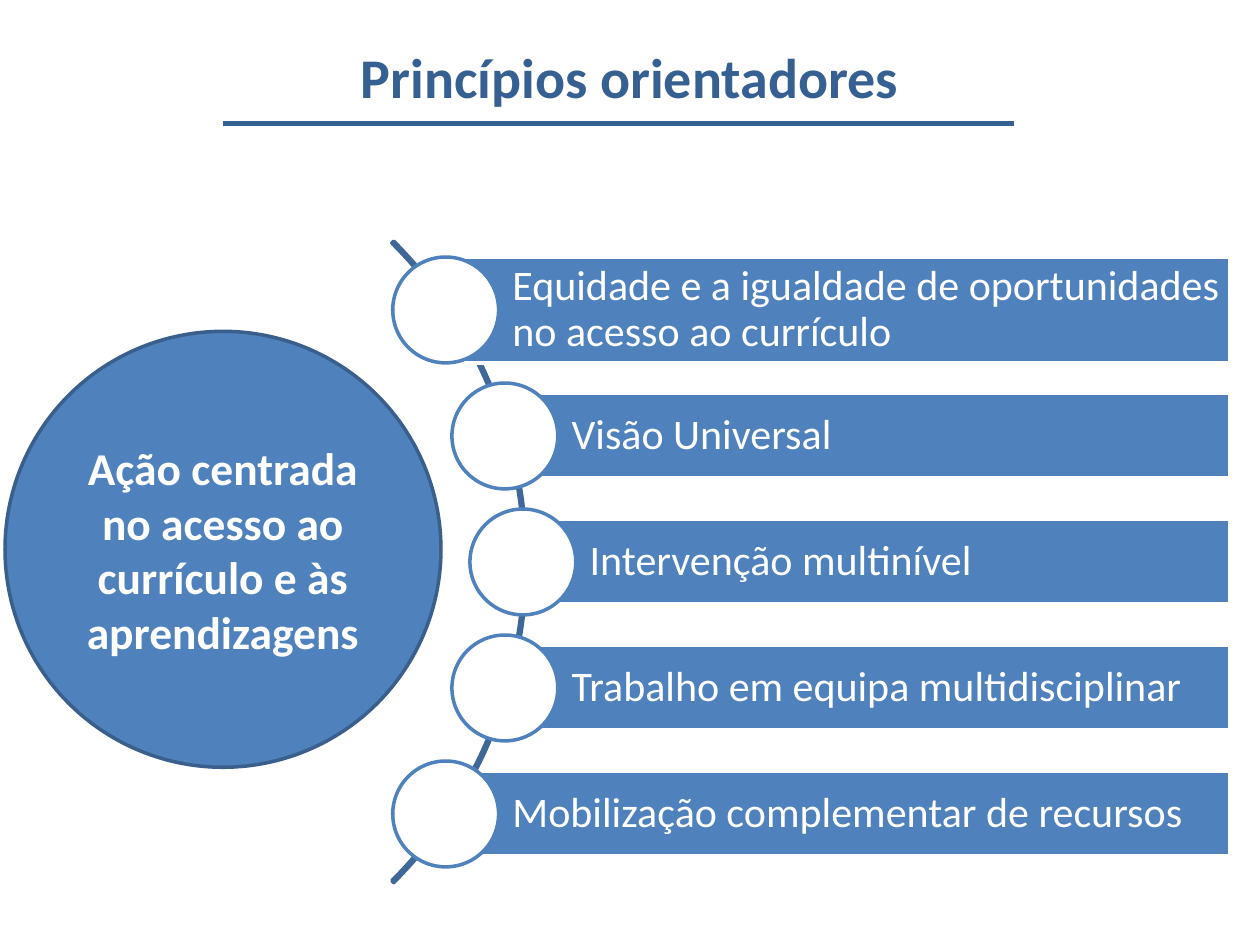
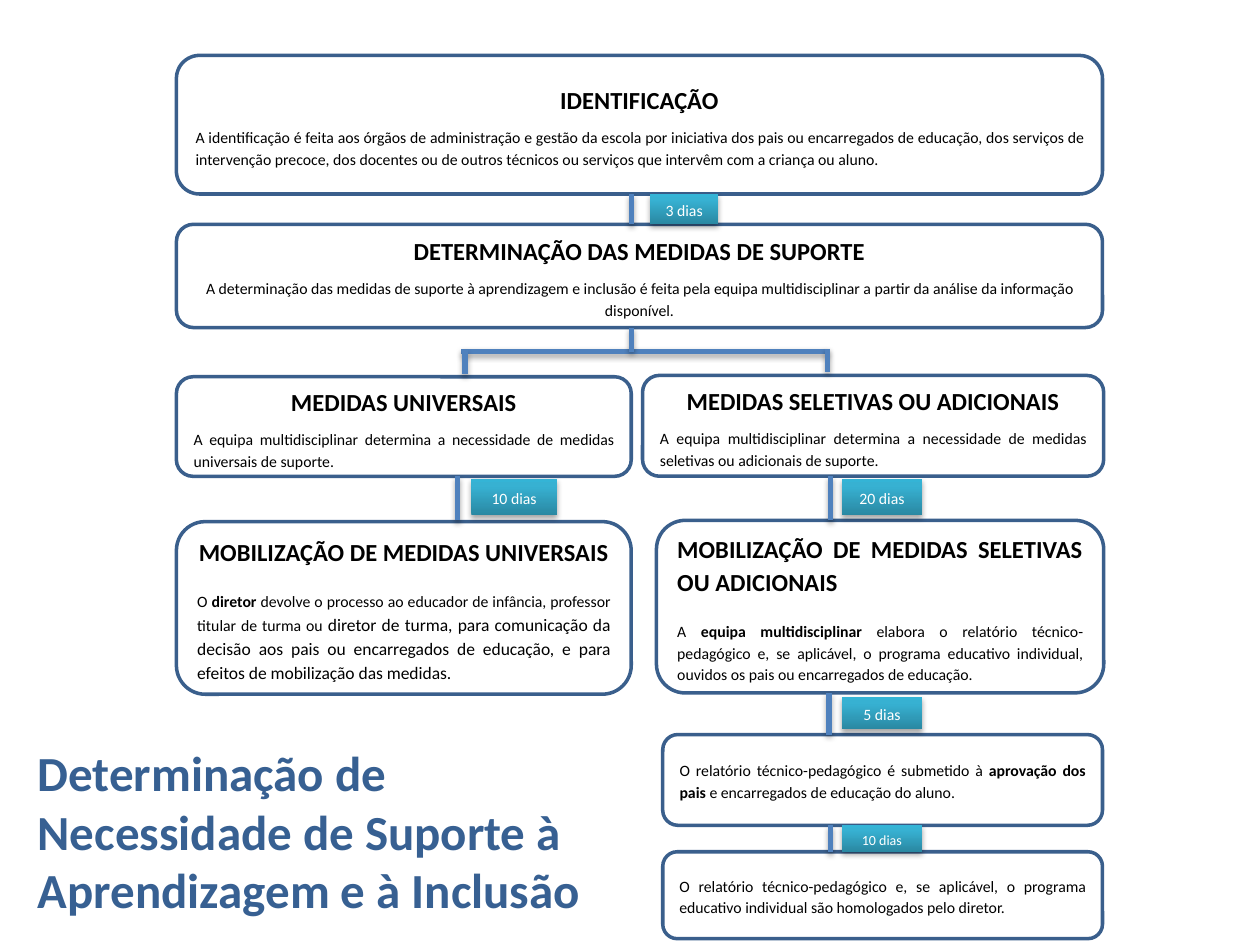
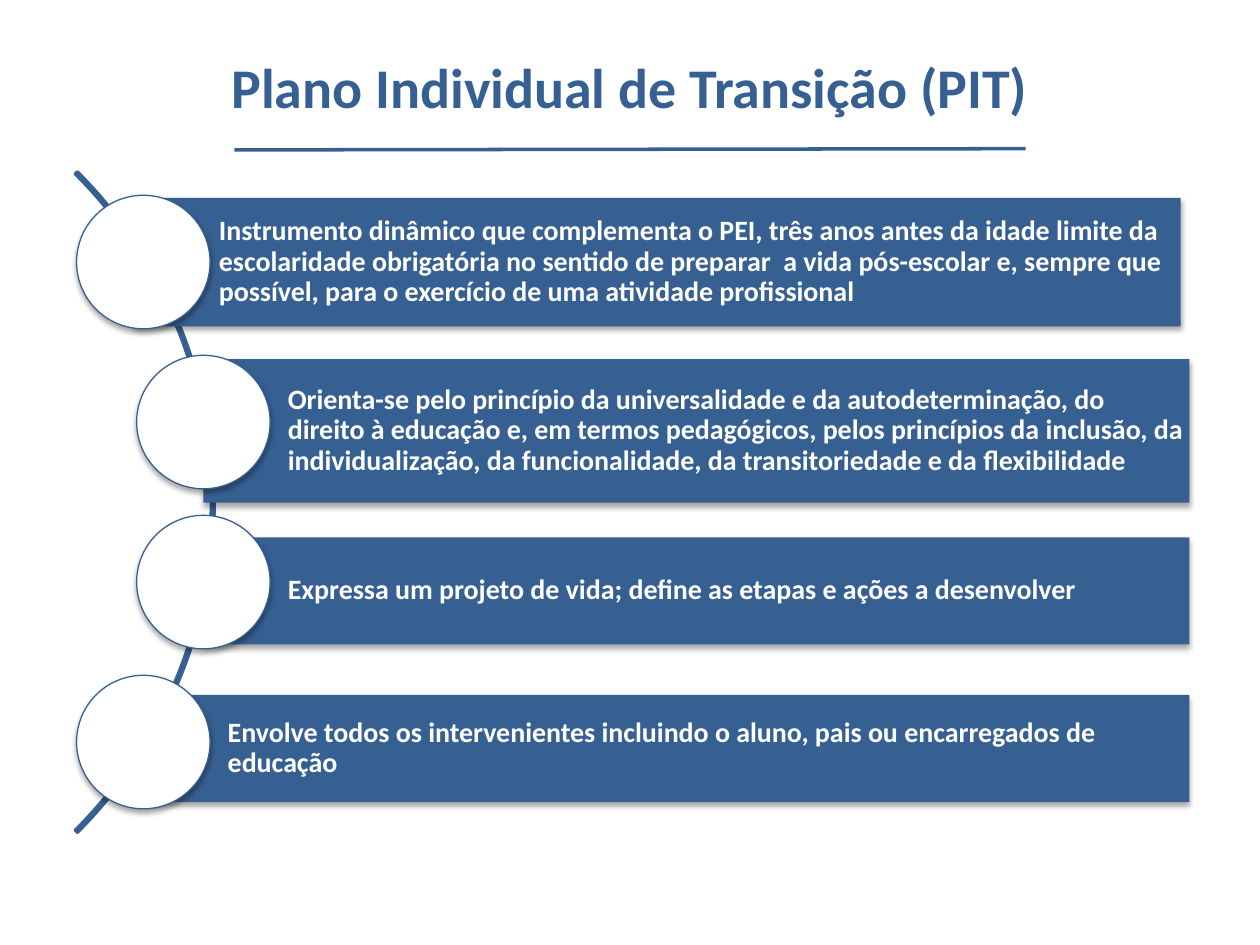
from copy import deepcopy
from dataclasses import dataclass
from math import sqrt

from lxml.etree import SubElement
from pptx import Presentation
from pptx.dml.color import RGBColor
from pptx.enum.shapes import MSO_CONNECTOR, MSO_SHAPE as SHAPE
from pptx.enum.text import MSO_ANCHOR as ANCHOR, MSO_AUTO_SIZE, PP_ALIGN as ALIGN
from pptx.oxml.ns import qn
from pptx.util import Inches, Pt


@dataclass(frozen=True)
class Theme:
    """Colours, font and type sizes shared by the slides."""

    font: str = "Calibri"
    navy: str = "376092"
    blue: str = "4F81BD"
    edge: str = "3A5F8C"
    arc: str = "3F6797"
    white: str = "FFFFFF"
    black: str = "000000"
    delay_stops: tuple = ((0, "2A88A2"), (0.8, "37B1D2"), (1, "34B4D6"))
    title: int = 32
    side_title: int = 28
    hub: int = 26
    heading: int = 14
    body: int = 9
    body_large: int = 10
    delay_small: int = 8


THEME = Theme()


@dataclass(frozen=True)
class Box:
    """A rectangle in inches."""

    left: float
    top: float
    width: float
    height: float

    def inner(self, left, top, width, height):
        """Return a box placed relative to this one."""
        return Box(self.left + left, self.top + top, width, height)

    def lengths(self):
        """Return the four measures as slide lengths."""
        return [Inches(n) for n in (self.left, self.top, self.width, self.height)]


@dataclass(frozen=True)
class Item:
    """One bar of an arc list, with its shift from its circle."""

    text: str
    height: float
    shift_x: float = 0
    shift_y: float = 0


@dataclass(frozen=True)
class ListStyle:
    """The look of one arc list."""

    arc: str
    bar: str
    bar_line: str | None
    circle_line: float
    size: int
    bold: bool
    indent: float
    inset: float
    shadow: bool


@dataclass(frozen=True)
class Words:
    """A paragraph of (text, bold, size) runs."""

    runs: tuple
    align: ALIGN = ALIGN.JUSTIFY
    after: float = 0
    spacing: float = 1.15


def rgb(colour):
    """Turn a hex string into a colour."""
    return RGBColor.from_string(colour)


def set_shadow(item, soft):
    """Give a shape or connector a soft shadow, or none."""
    effects = SubElement(item._element.spPr, qn("a:effectLst"))
    if soft:
        shadow = SubElement(effects, qn("a:outerShdw"), blurRad="40000",
                            dist="23000", dir="5400000", rotWithShape="0")
        colour = SubElement(shadow, qn("a:srgbClr"), val=THEME.black)
        SubElement(colour, qn("a:alpha"), val="35000")


def add_figure(page, kind, box, fill=None, line=None, width=2, soft=False):
    """Add a preset shape with its fill, line and shadow."""
    figure = page.shapes.add_shape(kind, *box.lengths())
    if fill:
        figure.fill.solid()
        figure.fill.fore_color.rgb = rgb(fill)
    else:
        figure.fill.background()
    if line:
        figure.line.color.rgb = rgb(line)
        figure.line.width = Pt(width)
    else:
        figure.line.fill.background()
    set_shadow(figure, soft)
    return figure


def add_line(page, start, end, colour, width, soft=False):
    """Add a straight line between two points."""
    line = page.shapes.add_connector(
        MSO_CONNECTOR.STRAIGHT, *[Inches(n) for n in (*start, *end)])
    line.line.color.rgb = rgb(colour)
    line.line.width = Pt(width)
    set_shadow(line, soft)


def write(shape, paragraphs, colour, anchor=ANCHOR.MIDDLE):
    """Write paragraphs into a shape, run by run."""
    frame = shape.text_frame
    frame.word_wrap = True
    frame.vertical_anchor = anchor
    for number, words in enumerate(paragraphs):
        para = frame.add_paragraph() if number else frame.paragraphs[0]
        para.alignment = words.align
        para.line_spacing = words.spacing
        para.space_after = Pt(words.after)
        for text, bold, size in words.runs:
            span = para.add_run()
            span.text = text
            span.font.name = THEME.font
            span.font.size = Pt(size)
            span.font.bold = bold
            span.font.color.rgb = rgb(colour)


def add_page(deck, title, box, size=THEME.title, align=ALIGN.CENTER, anchor=ANCHOR.MIDDLE):
    """Add a title-only slide and format its title."""
    page = deck.slides.add_slide(deck.slide_layouts[5])
    heading = page.shapes.title
    heading.left, heading.top, heading.width, heading.height = box.lengths()
    heading.text_frame.auto_size = MSO_AUTO_SIZE.NONE
    write(heading, [Words(((title, True, size),), align, spacing=1.0)], THEME.navy, anchor)
    return page


def arc_list(page, arc, right, diameter, pitch, items, style):
    """Place circles along an arc, each with a bar reaching to the right edge."""
    curve = add_figure(page, SHAPE.BLOCK_ARC, arc, line=style.arc)
    for index, value in enumerate((189, 27, 0.003)):
        curve.adjustments[index] = value
    radius = arc.width / 2
    for index, item in enumerate(items):
        offset = (index - (len(items) - 1) / 2) * pitch
        x = arc.left + radius + sqrt((radius - 0.03) ** 2 - offset ** 2)
        y = arc.top + radius + offset
        bar = add_figure(
            page, SHAPE.RECTANGLE,
            Box(x + item.shift_x, y - item.height / 2 + item.shift_y, right - x, item.height),
            style.bar, style.bar_line, soft=style.shadow)
        frame = bar.text_frame
        frame.margin_left = Inches(style.indent)
        frame.margin_top = frame.margin_right = frame.margin_bottom = Inches(style.inset)
        write(bar, [Words(((item.text, style.bold, style.size),), ALIGN.LEFT, spacing=0.9)],
              THEME.white)
        add_figure(page, SHAPE.OVAL,
                   Box(x - diameter / 2, y - diameter / 2, diameter, diameter),
                   THEME.white, style.bar, style.circle_line, style.shadow)


def add_step(page, box, paragraphs):
    """Add one rounded step of the flow."""
    step = add_figure(page, SHAPE.ROUNDED_RECTANGLE, box, THEME.white, THEME.edge)
    write(step, paragraphs, THEME.black)


def add_delay(page, box, text, size=THEME.body):
    """Add a graded label with the days between two steps."""
    label = add_figure(page, SHAPE.LINE_CALLOUT_1_BORDER_AND_ACCENT_BAR, box, soft=True)
    label.fill.gradient()
    label.fill.gradient_angle = 90
    last = list(label._element.spPr.iter(qn("a:gs")))[-1]
    last.addprevious(deepcopy(last))
    for stop, (position, colour) in zip(label.fill.gradient_stops, THEME.delay_stops):
        stop.position = position
        stop.color.rgb = rgb(colour)
    write(label, [Words(((text, False, size),), ALIGN.CENTER, 10)], THEME.white)


def heading(text, align=ALIGN.CENTER, after=6.0):
    """Return the heading paragraph of a step."""
    return Words(((text, True, THEME.heading),), align, after)


def body(*runs, align=ALIGN.JUSTIFY, after=0.0):
    """Return a body paragraph, where every second run is bold."""
    return Words(tuple((text, index % 2 == 1, THEME.body) for index, text in enumerate(runs)),
                 align, after)


def flow_chart(page, box):
    """Draw the steps, the links and the delays inside the box."""
    director = body("O ", "diretor", " devolve o processo ao educador de infância, "
                    "professor titular de turma ou")
    notice = (" diretor de turma, para comunicação da decisão aos pais ou encarregados de "
              "educação, e para efeitos de mobilização das medidas.", False, THEME.body_large)
    steps = [
        ((0, 0, 7.35, 1.1), [
            heading("IDENTIFICAÇÃO"),
            body("A identificação é feita aos órgãos de administração e gestão da escola por "
                 "iniciativa dos pais ou encarregados de educação, dos serviços de intervenção "
                 "precoce, dos docentes ou de outros técnicos ou serviços que intervêm com a "
                 "criança ou aluno.", after=6)]),
        ((0, 1.34, 7.35, 0.82), [
            heading("DETERMINAÇÃO DAS MEDIDAS DE SUPORTE"),
            body("A determinação das medidas de suporte à aprendizagem e inclusão é feita pela "
                 "equipa multidisciplinar a partir da análise da informação disponível.",
                 align=ALIGN.CENTER, after=6)]),
        ((0, 2.55, 3.61, 0.79), [
            heading("MEDIDAS UNIVERSAIS"),
            body("A equipa multidisciplinar determina a necessidade de medidas universais "
                 "de suporte.", after=6)]),
        ((3.7, 2.54, 3.66, 0.8), [
            heading("MEDIDAS SELETIVAS OU ADICIONAIS"),
            body("A equipa multidisciplinar determina a necessidade de medidas seletivas ou "
                 "adicionais de suporte.", after=6)]),
        ((0, 3.7, 3.61, 1.37), [
            heading("MOBILIZAÇÃO DE MEDIDAS UNIVERSAIS", after=12.6),
            Words(director.runs + (notice,))]),
        ((3.81, 3.69, 3.55, 1.37), [
            heading("MOBILIZAÇÃO DE MEDIDAS SELETIVAS OU ADICIONAIS", ALIGN.JUSTIFY, 12.6),
            body("A ", "equipa multidisciplinar ", "elabora o relatório técnico-pedagógico e, "
                 "se aplicável, o programa educativo individual, ouvidos os pais ou "
                 "encarregados de educação.")]),
        ((3.86, 5.39, 3.49, 0.72), [
            body("O relatório técnico-pedagógico é submetido à ", "aprovação dos pais ",
                 "e encarregados de educação do aluno.")]),
        ((3.86, 6.32, 3.49, 0.69), [
            body("O relatório técnico-pedagógico e, se aplicável, o programa educativo "
                 "individual são homologados pelo diretor.")]),
    ]
    links = [
        (3.61, 1.1, 3.61, 1.34), (5.17, 2.35, 2.26, 2.35), (3.61, 2.16, 3.61, 2.35),
        (2.29, 2.34, 2.29, 2.53), (5.17, 2.33, 5.17, 2.51), (2.23, 3.34, 2.23, 3.69),
        (5.19, 3.34, 5.19, 3.69), (5.18, 5.06, 5.18, 5.39), (5.19, 6.11, 5.19, 6.32),
    ]
    delays = [
        ((3.76, 1.1, 0.54, 0.24), "3 dias", THEME.body),
        ((2.34, 3.36, 0.68, 0.29), "10 dias", THEME.body),
        ((5.28, 3.36, 0.64, 0.29), "20 dias", THEME.body),
        ((5.28, 5.09, 0.64, 0.26), "5 dias", THEME.body),
        ((5.28, 6.11, 0.64, 0.21), "10 dias", THEME.delay_small),
    ]
    for place, paragraphs in steps:
        add_step(page, box.inner(*place), paragraphs)
    for x1, y1, x2, y2 in links:
        add_line(page, (box.left + x1, box.top + y1), (box.left + x2, box.top + y2),
                 THEME.blue, 3, True)
    for place, text, size in delays:
        add_delay(page, box.inner(*place), text, size)


def principles_page(deck):
    """Build the slide of guiding principles."""
    page = add_page(deck, "Princípios orientadores", Box(0.5, -0.02, 9, 1.25))
    add_line(page, (1.77, 0.98), (8.05, 0.98), THEME.navy, 3)
    items = [
        Item("Equidade e a igualdade de oportunidades no acesso ao currículo", 0.84),
        Item("Visão Universal", 0.67),
        Item("Intervenção multinível", 0.67),
        Item("Trabalho em equipa multidisciplinar", 0.67),
        Item("Mobilização complementar de recursos", 0.67),
    ]
    style = ListStyle(THEME.arc, THEME.blue, THEME.white, 2, 24, False, 0.53, 0.07, False)
    arc_list(page, Box(-3.02, 0.86, 7.2, 7.2), 9.76, 0.84, 1.0, items, style)
    hub = add_figure(page, SHAPE.OVAL, Box(0.04, 2.63, 3.46, 3.46), THEME.blue, THEME.edge)
    text = "Ação centrada no acesso ao currículo e às aprendizagens"
    write(hub, [Words(((text, True, THEME.hub),), ALIGN.CENTER, spacing=1.0)], THEME.white)


def support_page(deck):
    """Build the slide of the support decision flow."""
    page = add_page(deck, "Determinação de Necessidade de Suporte à Aprendizagem e à Inclusão",
                    Box(0.2, 5.84, 4.8, 1.51), THEME.side_title, ALIGN.LEFT, ANCHOR.TOP)
    flow_chart(page, Box(1.4, 0.44, 7.36, 7.01))


def transition_page(deck):
    """Build the slide of the individual transition plan."""
    page = add_page(deck, "Plano Individual de Transição (PIT)", Box(0.5, 0.06, 9, 1.25))
    add_line(page, (1.86, 1.19), (8.14, 1.18), THEME.navy, 2)
    items = [
        Item("Instrumento dinâmico que complementa o PEI, três anos antes da idade limite da "
             "escolaridade obrigatória no sentido de preparar  a vida pós-escolar e, sempre que "
             "possível, para o exercício de uma atividade profissional", 1.02, shift_x=-0.07),
        Item("Orienta-se pelo princípio da universalidade e da autodeterminação, do direito à "
             "educação e, em termos pedagógicos, pelos princípios da inclusão, da "
             "individualização, da funcionalidade, da transitoriedade e da flexibilidade",
             1.14, shift_y=0.07),
        Item("Expressa um projeto de vida; define as etapas e ações a desenvolver",
             0.85, shift_y=0.07),
        Item("Envolve todos os intervenientes incluindo o aluno, pais ou encarregados de "
             "educação", 0.85, shift_y=0.05),
    ]
    style = ListStyle(THEME.navy, THEME.navy, None, 0.75, 16, True, 0.67, 0.04, True)
    arc_list(page, Box(-5.71, 0.28, 7.41, 7.41), 9.44, 1.06, 1.27, items, style)


def main():
    """Build the deck and save it."""
    deck = Presentation()
    deck.slide_width, deck.slide_height = Inches(10), Inches(7.5)
    principles_page(deck)
    support_page(deck)
    transition_page(deck)
    deck.save("out.pptx")


if __name__ == "__main__":
    main()
